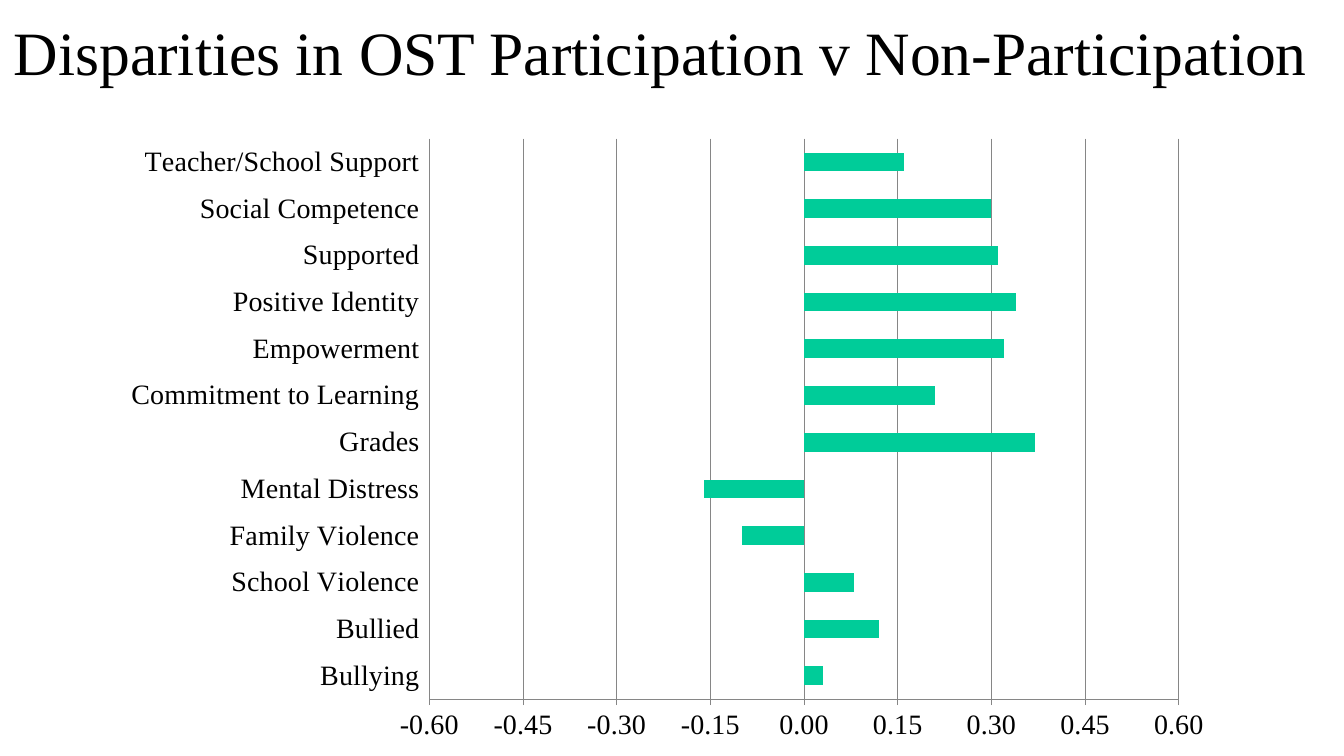
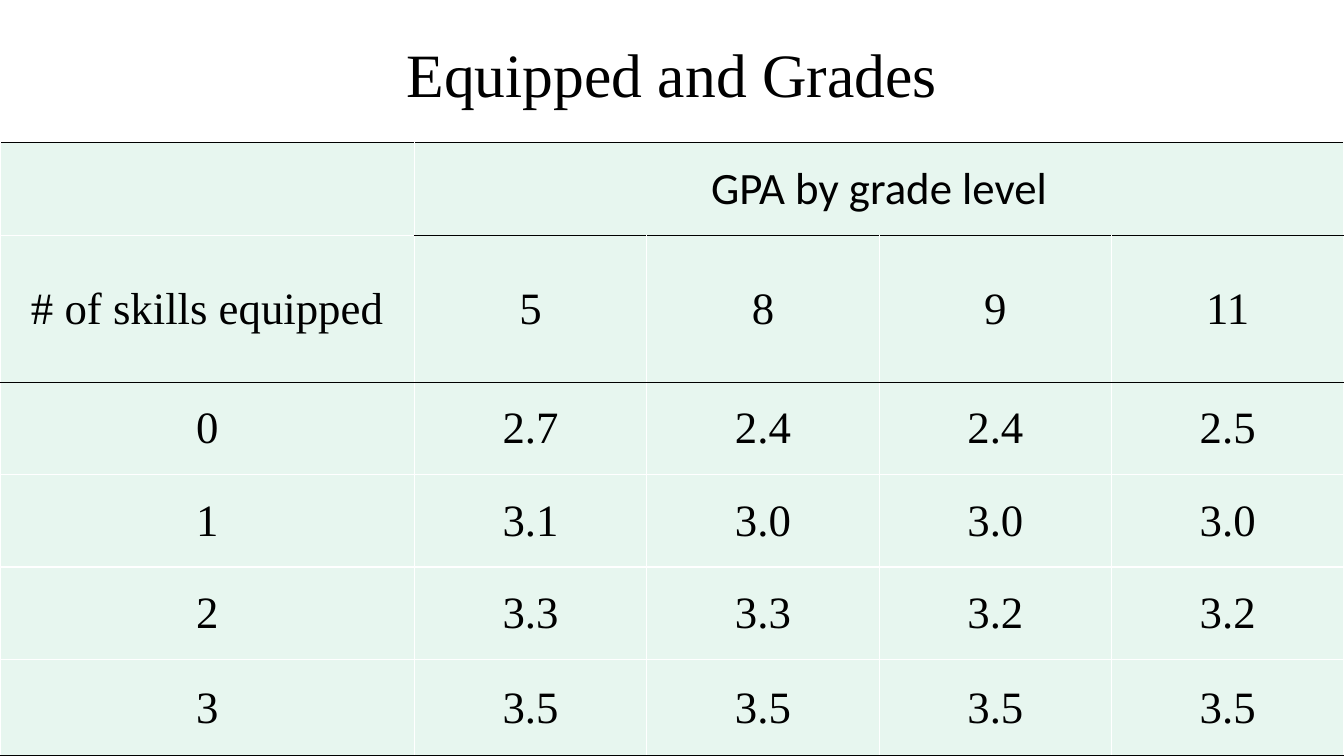
from lxml import etree
from pptx import Presentation
from pptx.chart.data import CategoryChartData
from pptx.dml.color import RGBColor
from pptx.enum.chart import XL_CHART_TYPE as CT, XL_TICK_LABEL_POSITION as LABELS, XL_TICK_MARK as TICK
from pptx.enum.text import MSO_ANCHOR as ANCHOR, PP_ALIGN as ALIGN
from pptx.oxml import parse_xml
from pptx.oxml.ns import nsdecls, qn
from pptx.util import Pt

BLACK = RGBColor(0x00, 0x00, 0x00)
WHITE = RGBColor(0xFF, 0xFF, 0xFF)
GRAY = RGBColor(0x86, 0x86, 0x86)
GREEN = RGBColor(0x00, 0xCC, 0x99)
MINT = RGBColor(0xE7, 0xF6, 0xEF)
SERIF, SANS = "Times New Roman", "Calibri"

DISPARITIES = [
    ("Bullying", 0.03), ("Bullied", 0.12), ("School Violence", 0.08),
    ("Family Violence", -0.1), ("Mental Distress", -0.16), ("Grades", 0.37),
    ("Commitment to Learning", 0.21), ("Empowerment", 0.32),
    ("Positive Identity", 0.34), ("Supported", 0.31),
    ("Social Competence", 0.3), ("Teacher/School Support", 0.16),
]
GPA_ROWS = [
    ["", "GPA by grade level", "", "", ""],
    ["# of skills equipped", "5", "8", "9", "11"],
    ["0", "2.7", "2.4", "2.4", "2.5"],
    ["1", "3.1", "3.0", "3.0", "3.0"],
    ["2", "3.3", "3.3", "3.2", "3.2"],
    ["3", "3.5", "3.5", "3.5", "3.5"],
]
COL_WIDTHS = [296] + [166] * 4
ROW_HEIGHTS = [66, 105, 66, 66, 66, 69]


def style_font(font, size, name=SERIF):
    font.size = Pt(size)
    font.name = name
    font.color.rgb = BLACK


def add_title(slide, text, x, y, w, h):
    tf = slide.shapes.add_textbox(Pt(x), Pt(y), Pt(w), Pt(h)).text_frame
    tf.word_wrap = True
    tf.vertical_anchor = ANCHOR.MIDDLE
    p = tf.paragraphs[0]
    p.text = text
    p.alignment = ALIGN.CENTER
    style_font(p.font, 44)


def set_plot_layout(chart, **fractions):
    plot_area = chart._chartSpace.find(".//" + qn("c:plotArea"))
    for old in plot_area.findall(qn("c:layout")):
        plot_area.remove(old)
    layout = parse_xml(
        f'<c:layout {nsdecls("c")}><c:manualLayout><c:layoutTarget val="inner"/>'
        '<c:xMode val="edge"/><c:yMode val="edge"/></c:manualLayout></c:layout>')
    for tag, value in fractions.items():
        etree.SubElement(layout[0], qn("c:" + tag)).set("val", str(value))
    plot_area.insert(0, layout)


def style_line(line):
    line.color.rgb = GRAY
    line.width = Pt(0.75)


def add_disparity_chart(slide, x, y, w, h):
    data = CategoryChartData()
    data.categories = [name for name, _ in DISPARITIES]
    data.add_series("Series 1", [value for _, value in DISPARITIES])
    chart = slide.shapes.add_chart(
        CT.BAR_CLUSTERED, Pt(x), Pt(y), Pt(w), Pt(h), data).chart
    chart.has_legend = chart.has_title = False
    style_font(chart.font, 20)
    set_plot_layout(chart, x=0.285, y=0.02, w=0.67, h=0.89)

    plot = chart.plots[0]
    plot.gap_width = 150
    plot.vary_by_categories = False
    bars = plot.series[0]
    bars.invert_if_negative = False
    bars.format.fill.solid()
    bars.format.fill.fore_color.rgb = GREEN

    cat_axis, val_axis = chart.category_axis, chart.value_axis
    cat_axis.tick_label_position = LABELS.LOW
    cat_axis.major_tick_mark = TICK.NONE
    val_axis.major_tick_mark = TICK.OUTSIDE
    val_axis.minimum_scale, val_axis.maximum_scale = -0.6, 0.6
    val_axis.major_unit = 0.15
    val_axis.has_major_gridlines = True
    val_axis.tick_labels.number_format = "###0.00"
    val_axis.tick_labels.number_format_is_linked = False
    for axis in (cat_axis, val_axis):
        style_line(axis.format.line)
    style_line(val_axis.major_gridlines.format.line)


def edge_color(edge, col):
    ruled = edge in (0, 2, len(GPA_ROWS)) or (edge == 1 and col > 0)
    return BLACK if ruled else WHITE


def set_borders(cell, **colors):
    tc_pr = cell._tc.get_or_add_tcPr()
    for side, color in colors.items():
        tc_pr.append(parse_xml(
            f'<a:ln{side} {nsdecls("a")} w="12700"><a:solidFill>'
            f'<a:srgbClr val="{color}"/></a:solidFill></a:ln{side}>'))


def style_cell(cell, text, row, col):
    set_borders(cell, L=WHITE, R=WHITE,
                T=edge_color(row, col), B=edge_color(row + 1, col))
    cell.fill.solid()
    cell.fill.fore_color.rgb = MINT
    cell.margin_left = cell.margin_right = cell.margin_top = Pt(0.75)
    cell.margin_bottom = 0
    cell.vertical_anchor = ANCHOR.MIDDLE
    if text:
        p = cell.text_frame.paragraphs[0]
        p.text = text
        p.alignment = ALIGN.CENTER
        style_font(p.font, 32, SANS if row == 0 else SERIF)


def add_gpa_table(slide, x, y, w, h):
    table = slide.shapes.add_table(
        len(ROW_HEIGHTS), len(COL_WIDTHS), Pt(x), Pt(y), Pt(w), Pt(h)).table
    table.first_row = table.horz_banding = False
    for column, width in zip(table.columns, COL_WIDTHS):
        column.width = Pt(w * width / sum(COL_WIDTHS))
    for row, height in zip(table.rows, ROW_HEIGHTS):
        row.height = Pt(h * height / sum(ROW_HEIGHTS))
    table.cell(0, 1).merge(table.cell(0, 4))
    for r, texts in enumerate(GPA_ROWS):
        for c, text in enumerate(texts):
            style_cell(table.cell(r, c), text, r, c)


def main():
    prs = Presentation()
    prs.slide_width, prs.slide_height = Pt(960), Pt(540)
    blank = prs.slide_layouts[6]

    s = prs.slides.add_slide(blank)
    add_title(s, "Disparities in OST Participation v Non-Participation", 0, 0, 945, 72)
    add_disparity_chart(s, 79, 90, 799, 450)

    s = prs.slides.add_slide(blank)
    add_title(s, "Equipped and Grades", 66, 0, 828, 104)
    add_gpa_table(s, 0, 102, 960, 438)

    prs.save("out.pptx")


if __name__ == "__main__":
    main()
